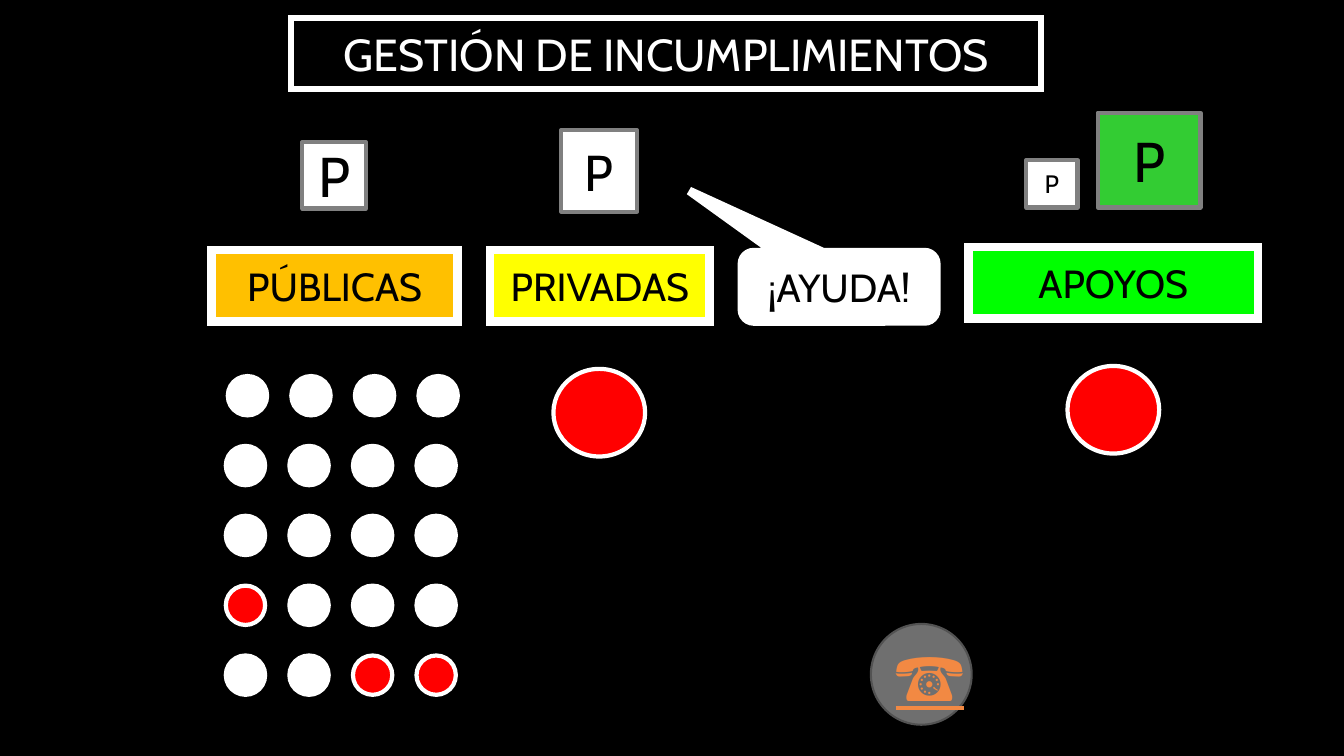
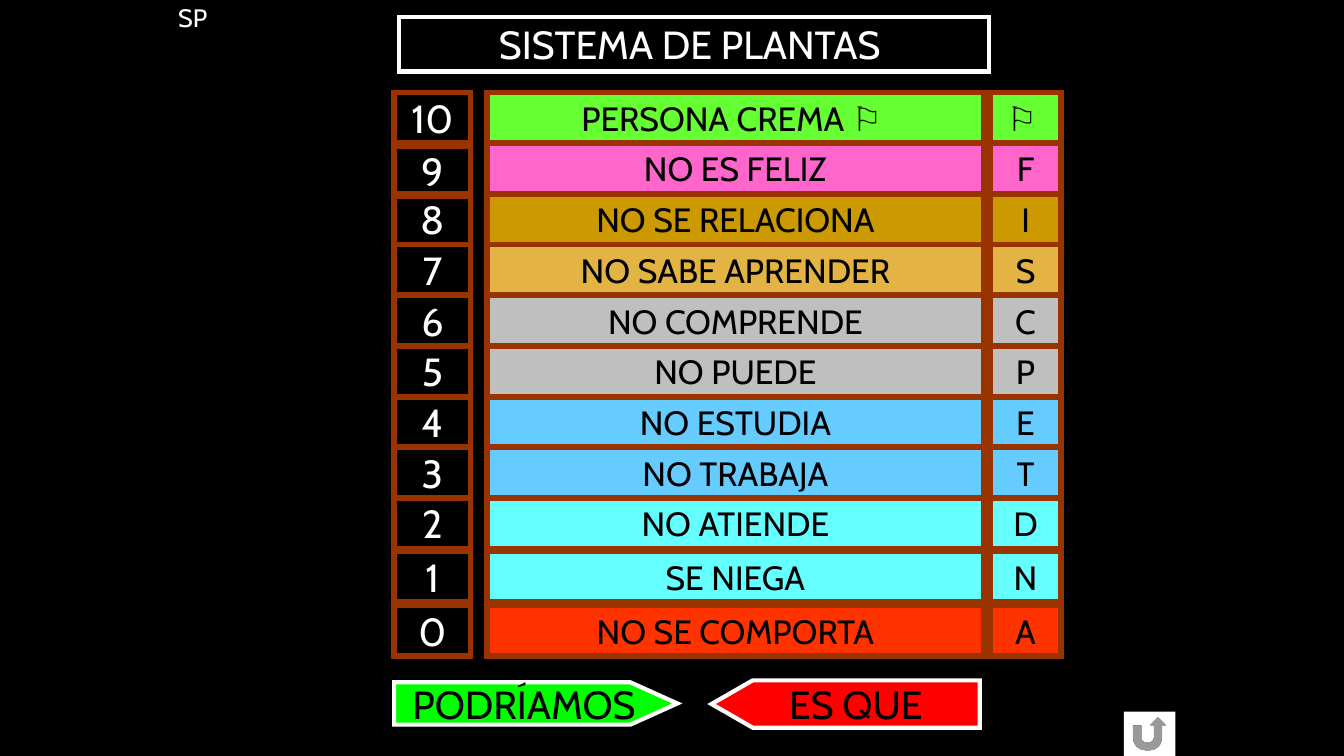
from dataclasses import dataclass
from lxml.etree import SubElement
from pptx import Presentation
from pptx.dml.color import RGBColor
from pptx.enum.shapes import MSO_SHAPE as Shape
from pptx.enum.text import MSO_ANCHOR as Anchor, PP_ALIGN as Align
from pptx.oxml.ns import qn
from pptx.util import Pt


@dataclass(frozen=True)
class Theme:
    font: str = "Cabin"
    black: str = "000000"
    white: str = "FFFFFF"
    gray: str = "808080"
    red: str = "FF0000"
    lime: str = "00FF00"
    green: str = "33CC33"
    brown: str = "993300"
    dial: str = "6F6F6F"
    dial_edge: str = "525252"
    phone: str = "F28943"
    fade: str = "A6A6A6"
    small: int = 18
    row: int = 24
    label: int = 28
    title: int = 32
    icon: int = 48


T = Theme()

HEADINGS = [
    ("PÚBLICAS", "FFC000", (151.2, 178.6, 175.7, 51.1)),
    ("PRIVADAS", "FFFF00", (349.9, 178.6, 157, 51.1)),
    ("APOYOS", T.lime, (691.9, 176.4, 206.6, 51.1)),
]
PARKINGS = [
    (40, T.white, (216, 101.5, 45.4, 47.5)),
    (36, T.white, (401, 92.9, 54, 58.3)),
    (18, T.white, (733, 114.5, 36.7, 33.8)),
    (40, T.green, (784.1, 80.6, 73.4, 67.7)),
]
LIGHTS = [(395.3, 263.5), (762.5, 261.4)]
LIGHT_SIZE = (65.5, 62.6)

DOT_ROWS = ["oooo", "oooo", "oooo", "xooo", "ooxx"]
DOT_LEFT, DOT_TOP, DOT_SIZE = 161.3, 268.6, 28.1
DOT_STEP_X, DOT_STEP_Y, FIRST_ROW_SHIFT = 45.4, 49.9, 1.4

FLOORS = [
    ("10", "PERSONA CREMA ⚐ ", "⚐ ", "66FF33"),
    ("9", "NO ES FELIZ", "F", "FF66CC"),
    ("8", "NO SE RELACIONA", "I", "CC9900"),
    ("7", "NO SABE APRENDER", "S", "E3B443"),
    ("6", "NO COMPRENDE", "C", "BFBFBF"),
    ("5", "NO PUEDE", "P", "BFBFBF"),
    ("4", "NO ESTUDIA", "E", "66CCFF"),
    ("3", "NO TRABAJA", "T", "66CCFF"),
    ("2", "NO ATIENDE", "D", "66FFFF"),
    ("1", "SE NIEGA", "N", "66FFFF"),
    ("0", "NO SE COMPORTA", "A", "FF3300"),
]
FLOOR_TOP, FLOOR_STEP, FLOOR_HEIGHT = 66.2, 36.2, 36
FLOOR_DROP = {"1": 1.9, "0": 4.4}
NUMBER_DROP = {**FLOOR_DROP, "9": 2}
NUMBER_COL, NAME_COL, LETTER_COL = (281.5, 54.7), (347.8, 355), (707, 51.1)

ARROWS = [
    ("PODRÍAMOS", T.lime, (281.5, 487.4, 202.3, 30.2), 1.11, False),
    ("ES QUE", T.red, (508.3, 486, 191.5, 33.8), 0.87, True),
]


def rgb(code):
    return RGBColor.from_string(code)


def write(sp, text, size=T.label, color=T.black, align=Align.CENTER,
          wrap=False, underline=None):
    tf = sp.text_frame
    tf.word_wrap = wrap
    tf.vertical_anchor = Anchor.MIDDLE
    p = tf.paragraphs[0]
    p.alignment = align
    r = p.add_run()
    r.text = text
    r.font.name = T.font
    r.font.size = Pt(size)
    r.font.underline = underline
    r.font.color.rgb = rgb(color)
    return r


def add(s, kind, box, fill=None, line=None, width=3, miter=True):
    sp = s.shapes.add_shape(kind, *map(Pt, box))
    sp.shadow.inherit = False
    if fill:
        sp.fill.solid()
        sp.fill.fore_color.rgb = rgb(fill)
    else:
        sp.fill.background()
    if line:
        sp.line.color.rgb = rgb(line)
        sp.line.width = Pt(width)
        if miter:
            SubElement(sp.line._get_or_add_ln(), qn("a:miter"), lim="800000")
    else:
        sp.line.fill.background()
    return sp


def new_slide(prs, title, box, size, width):
    s = prs.slides.add_slide(prs.slide_layouts[6])
    s.background.fill.solid()
    s.background.fill.fore_color.rgb = rgb(T.black)
    sp = add(s, Shape.RECTANGLE, box, line=T.white, width=width)
    write(sp, title, size=size, color=T.white)
    return s


def breaches_slide(prs):
    s = new_slide(prs, "GESTIÓN DE INCUMPLIMIENTOS",
                  (208.1, 13, 535.7, 50.4), T.title, 4.5)
    for x, y in LIGHTS:
        add(s, Shape.OVAL, (x, y, *LIGHT_SIZE), T.red, T.white)
    for size, fill, box in PARKINGS:
        sp = add(s, Shape.RECTANGLE, box, fill, T.gray, miter=False)
        write(sp, "P", size=size)
    for text, fill, box in HEADINGS:
        write(add(s, Shape.RECTANGLE, box, fill, T.white, 6), text)
    for i, row in enumerate(DOT_ROWS):
        left = DOT_LEFT + (FIRST_ROW_SHIFT if i == 0 else 0)
        for j, mark in enumerate(row):
            box = (left + j * DOT_STEP_X, DOT_TOP + i * DOT_STEP_Y,
                   DOT_SIZE, DOT_SIZE)
            add(s, Shape.OVAL, box, T.red if mark == "x" else T.white, T.white)
    sp = add(s, Shape.ROUNDED_RECTANGULAR_CALLOUT,
             (529.9, 180, 139, 49.7), T.white, T.white, 6)
    for i, value in enumerate((-0.77, -1.38, 0.17)):
        sp.adjustments[i] = value
    write(sp, "¡AYUDA!")
    sp = add(s, Shape.OVAL, (622.1, 445.7, 72, 72), T.dial, T.dial_edge, 1.5)
    write(sp, "☎", size=T.icon, color=T.phone, wrap=True, underline=True)


def floors_slide(prs):
    s = new_slide(prs, "SISTEMA DE PLANTAS ",
                  (285.1, 12.2, 421.2, 38.9), T.label, 3)
    add(s, Shape.ACTION_BUTTON_RETURN, (802.8, 508.3, 36.7, 31.7), T.white)
    sp = s.shapes.add_textbox(*map(Pt, (120.2, -1.4, 42.5, 27.4)))
    r = write(sp, "SP", size=T.small, color=T.white, align=Align.LEFT, wrap=True)
    r.font.fill.gradient()
    r.font.fill.gradient_angle = 267
    for stop, color in zip(r.font.fill.gradient_stops, (T.white, T.fade)):
        stop.color.rgb = rgb(color)
    for text, fill, box, point, flipped in ARROWS:
        sp = add(s, Shape.PENTAGON, box, fill, T.white)
        sp.adjustments[0] = point
        if flipped:
            sp.element.spPr.xfrm.set("flipH", "1")
        write(sp, text)
    for i, (number, name, letter, fill) in enumerate(FLOORS):
        top = FLOOR_TOP + i * FLOOR_STEP
        y = top + FLOOR_DROP.get(number, 0)
        number_y = top + NUMBER_DROP.get(number, 0)
        for text, (x, w), cell_y, cell_fill, size, color in (
            (number, NUMBER_COL, number_y, None, T.label, T.white),
            (name, NAME_COL, y, fill, T.row, T.black),
            (letter, LETTER_COL, y, fill, T.row, T.black),
        ):
            sp = add(s, Shape.RECTANGLE, (x, cell_y, w, FLOOR_HEIGHT),
                     cell_fill, T.brown, 4)
            write(sp, text, size=size, color=color)


def main():
    prs = Presentation()
    prs.slide_width, prs.slide_height = Pt(960), Pt(540)
    breaches_slide(prs)
    floors_slide(prs)
    prs.save("out.pptx")


if __name__ == "__main__":
    main()
